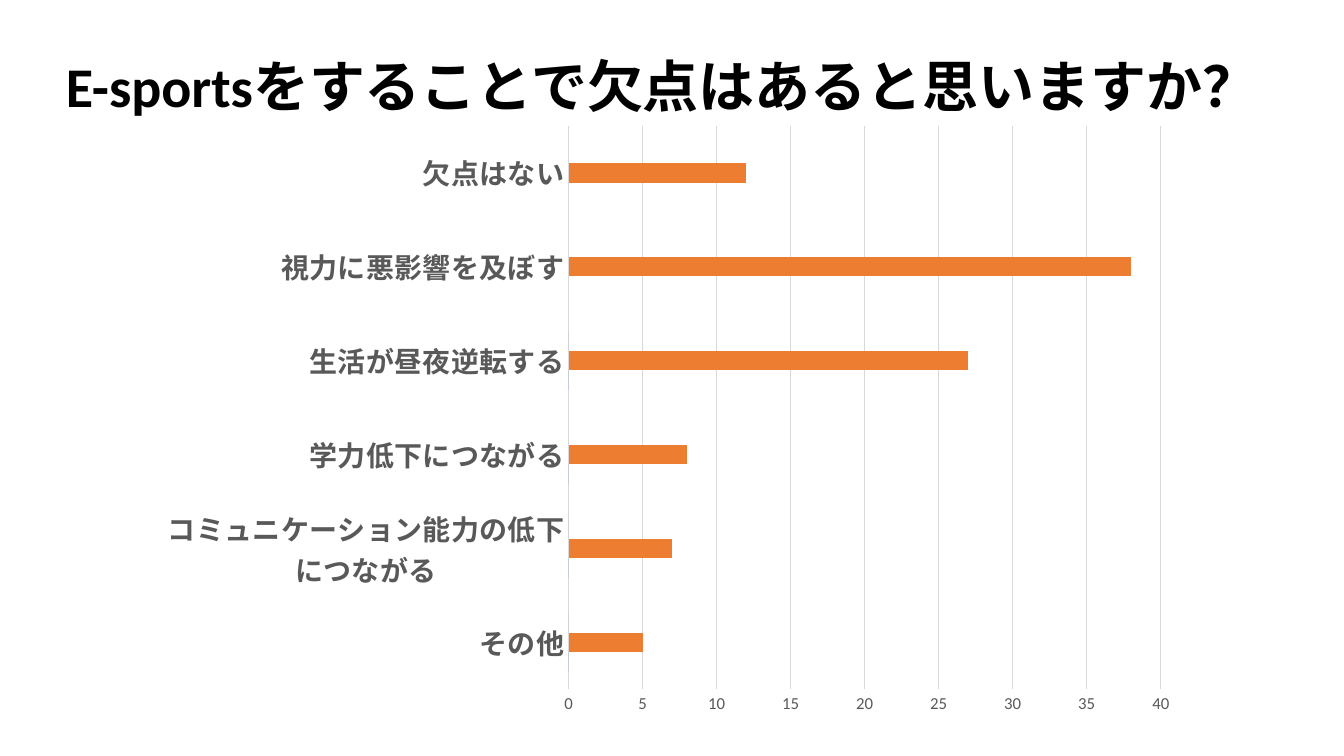
from dataclasses import dataclass
from typing import Optional

from lxml.etree import SubElement
from pptx import Presentation
from pptx.chart.data import CategoryChartData
from pptx.dml.color import RGBColor
from pptx.enum.chart import XL_CHART_TYPE, XL_TICK_MARK
from pptx.enum.text import MSO_AUTO_SIZE, PP_ALIGN
from pptx.oxml.ns import qn
from pptx.util import Cm, Pt

FACE = "Calibri"
GREY = "595959"
RULE = "D9D9D9"


@dataclass
class Series:
    name: str
    vals: list[Optional[int]]
    color: str


CATS = ["その他", "コミュニケーション能力の低下につながる", "学力低下につながる",
        "生活が昼夜逆転する", "視力に悪影響を及ぼす", "欠点はない"]
ROWS = [
    Series("列1", [0, 0, 0, 0, None, None], "4472C4"),
    Series("系列 2", [5, 7, 8, 27, 38, 12], "ED7D31"),
    Series("系列 3", [0, 0, None, 0, None, None], "A5A5A5"),
]


def rgb(color: str) -> RGBColor:
    return RGBColor.from_string(color)


def style(font, size: float, color: str, bold: bool = False) -> None:
    font.name = FACE
    font.size = Pt(size)
    font.bold = bold
    font.color.rgb = rgb(color)


def rule(line) -> None:
    line.color.rgb = rgb(RULE)
    line.width = Pt(0.75)


def place(chart, x: float, y: float, w: float, h: float) -> None:
    """Fix the inner plot area, as shares of the chart frame."""
    plot = chart._chartSpace.chart.plotArea
    for old in plot.findall(qn("c:layout")):
        plot.remove(old)
    layout = plot.makeelement(qn("c:layout"))
    plot.insert(0, layout)
    manual = SubElement(layout, qn("c:manualLayout"))
    for tag, val in (("layoutTarget", "inner"), ("xMode", "edge"),
                     ("yMode", "edge"), ("x", x), ("y", y), ("w", w), ("h", h)):
        SubElement(manual, qn(f"c:{tag}")).set("val", str(val))


def add_title(slide) -> None:
    box = slide.shapes.add_textbox(Cm(0.99), Cm(1.17), Cm(31.39), Cm(1.96))
    frame = box.text_frame
    frame.word_wrap = True
    frame.auto_size = MSO_AUTO_SIZE.SHAPE_TO_FIT_TEXT
    para = frame.paragraphs[0]
    para.alignment = PP_ALIGN.CENTER
    run = para.add_run()
    run.text = "E-sportsをすることで欠点はあると思いますか？"
    style(run.font, 40, "000000", True)


def add_bars(slide) -> None:
    data = CategoryChartData()
    data.categories = CATS
    for row in ROWS:
        data.add_series(row.name, row.vals)
    chart = slide.shapes.add_chart(
        XL_CHART_TYPE.BAR_CLUSTERED,
        Cm(3.91), Cm(3.12), Cm(25.6), Cm(16.89), data).chart
    chart.has_title = False
    chart.has_legend = False
    style(chart.font, 10, "000000")
    place(chart, 0.407, 0.003, 0.583, 0.841)

    # Bars
    plot = chart.plots[0]
    plot.gap_width = 182
    plot.vary_by_categories = False
    for bar, row in zip(plot.series, ROWS):
        bar.format.fill.solid()
        bar.format.fill.fore_color.rgb = rgb(row.color)

    # Axes
    cat, val = chart.category_axis, chart.value_axis
    for axis in (cat, val):
        axis.major_tick_mark = XL_TICK_MARK.NONE
        axis.minor_tick_mark = XL_TICK_MARK.NONE
    style(cat.tick_labels.font, 20, GREY, True)
    rule(cat.format.line)
    style(val.tick_labels.font, 12, GREY)
    val.format.line.fill.background()
    val.minimum_scale, val.maximum_scale, val.major_unit = 0, 40, 5
    val.has_major_gridlines = True
    rule(val.major_gridlines.format.line)


def main() -> None:
    deck = Presentation()
    deck.slide_width, deck.slide_height = Cm(33.87), Cm(19.05)
    slide = deck.slides.add_slide(deck.slide_layouts[6])
    add_title(slide)
    add_bars(slide)
    deck.save("out.pptx")


if __name__ == "__main__":
    main()
